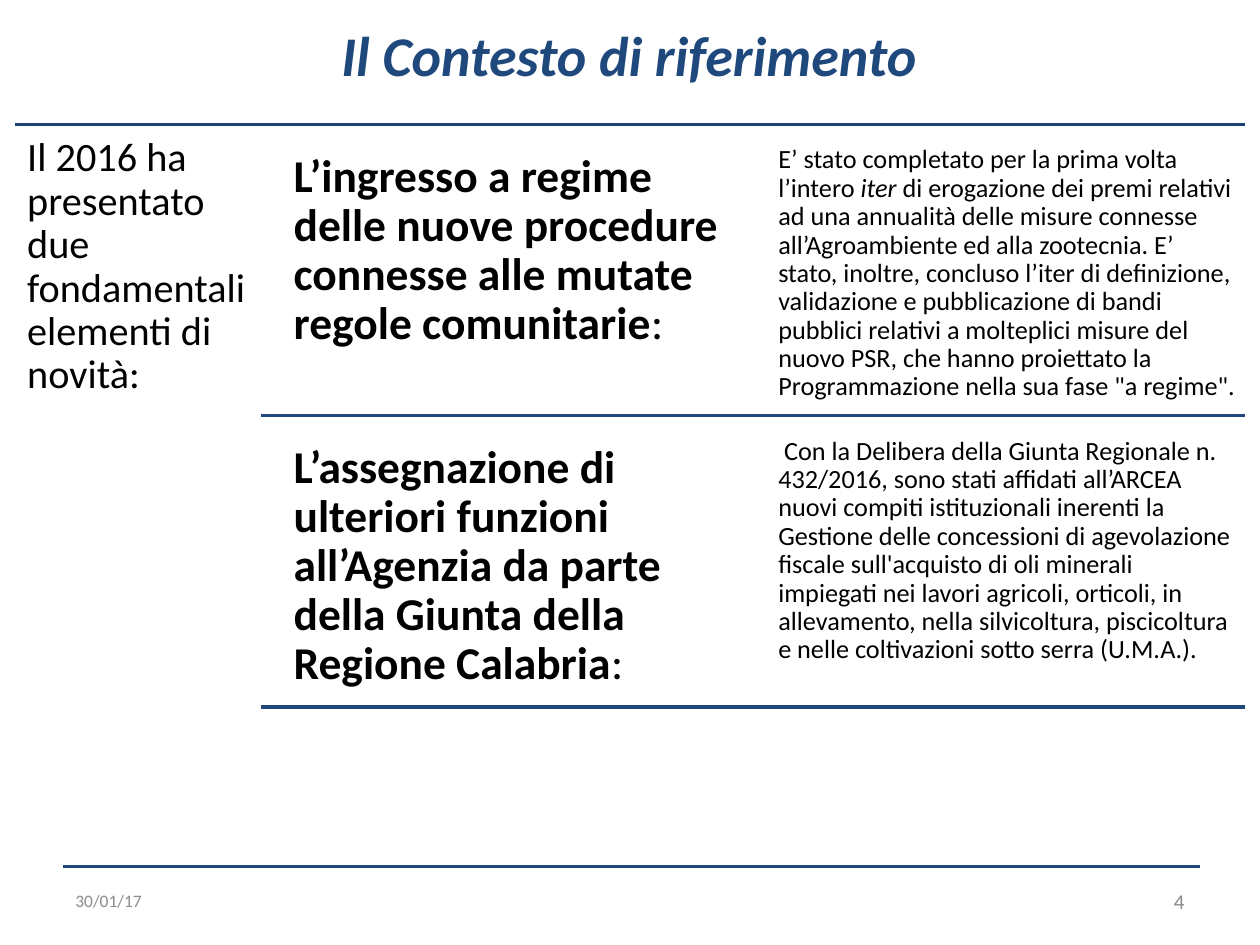
"""Build the slide on the context of reference, with two novelties of 2016."""
from lxml import etree
from pptx import Presentation
from pptx import util as u
from pptx.dml.color import RGBColor
from pptx.enum import shapes, text
from pptx.oxml.ns import qn

NAVY = "1F497D"
BLACK = "000000"

deck = Presentation()
deck.slide_width, deck.slide_height = u.Cm(25.4), u.Cm(19.05)
slide = deck.slides.add_slide(deck.slide_layouts[6])


def add_rule(left, right, y, color, width):
    rule = slide.shapes.add_connector(
        shapes.MSO_CONNECTOR.STRAIGHT, u.Cm(left), u.Cm(y), u.Cm(right), u.Cm(y))
    rule.line.color.rgb = RGBColor.from_string(color)
    rule.line.width = u.Pt(width)
    etree.SubElement(rule._element.spPr, qn("a:effectLst"))


def add_text(box, runs, size, color=BLACK, inset=None, align=text.PP_ALIGN.LEFT,
             anchor=text.MSO_ANCHOR.TOP):
    frame = slide.shapes.add_textbox(*[u.Cm(length) for length in box]).text_frame
    frame.word_wrap = True
    frame.vertical_anchor = anchor
    paragraph = frame.paragraphs[0]
    paragraph.alignment = align
    if inset is not None:
        frame.margin_left = frame.margin_right = u.Cm(inset)
        frame.margin_top = frame.margin_bottom = u.Cm(inset)
        paragraph.line_spacing = 0.9
    for words, bold, italic in runs:
        run = paragraph.add_run()
        run.text = words
        run.font.name = "Calibri"
        run.font.size = u.Pt(size)
        run.font.bold, run.font.italic = bold, italic
        run.font.color.rgb = RGBColor.from_string(color)


add_rule(1.27, 24.2, 17.47, NAVY, 1.5)
add_text((0.25, 0.28, 24.87, 2.06), [("Il Contesto di riferimento", True, True)], 32,
         NAVY, align=text.PP_ALIGN.CENTER)
add_text((1.27, 17.65, 5.92, 1.02), [("30/01/17", False, False)], 10, "8C8C8C",
         anchor=text.MSO_ANCHOR.MIDDLE)
add_text((18.21, 17.65, 5.92, 1.02), [("4", False, False)], 12, "898989",
         align=text.PP_ALIGN.RIGHT, anchor=text.MSO_ANCHOR.MIDDLE)

top, row_step, right_edge = 2.51, 5.87, 25.1
add_rule(0.3, right_edge, top, "1C4271", 2)
add_text((0.3, top, 4.95, 11.99),
         [("Il 2016 ha presentato due fondamentali elementi di novità:", False, False)],
         23, inset=0.25)

novelties = [
    ("L’ingresso a regime delle nuove procedure connesse alle mutate regole comunitarie",
     [("E’ stato completato per la prima volta l’intero ", False, False),
      ("iter", False, True),
      (" di erogazione dei premi relativi ad una annualità delle misure connesse "
       "all’Agroambiente ed alla zootecnia. E’ stato, inoltre, concluso l’iter di "
       "definizione, validazione e pubblicazione di bandi pubblici relativi a molteplici "
       "misure del nuovo PSR, che hanno proiettato la Programmazione nella sua fase "
       "\"a regime\".", False, False)]),
    ("L’assegnazione di ulteriori funzioni all’Agenzia da parte della Giunta della "
     "Regione Calabria",
     [(" Con la Delibera della Giunta Regionale n. 432/2016, sono stati affidati "
       "all’ARCEA nuovi compiti istituzionali inerenti la Gestione delle concessioni di "
       "agevolazione fiscale sull'acquisto di oli minerali impiegati nei lavori agricoli, "
       "orticoli, in allevamento, nella silvicoltura, piscicoltura e nelle coltivazioni "
       "sotto serra (U.M.A.).", False, False)]),
]
for row, (heading, details) in enumerate(novelties):
    row_top = top + row * row_step
    add_text((5.64, row_top + 0.29, 9.55, 5.59),
             [(heading, True, False), (":", False, False)], 26, inset=0.28)
    add_text((15.54, row_top + 0.29, 9.55, 5.59), details, 15, inset=0.15)
    add_rule(5.26, right_edge, row_top + row_step, NAVY, 2)

deck.save("out.pptx")
